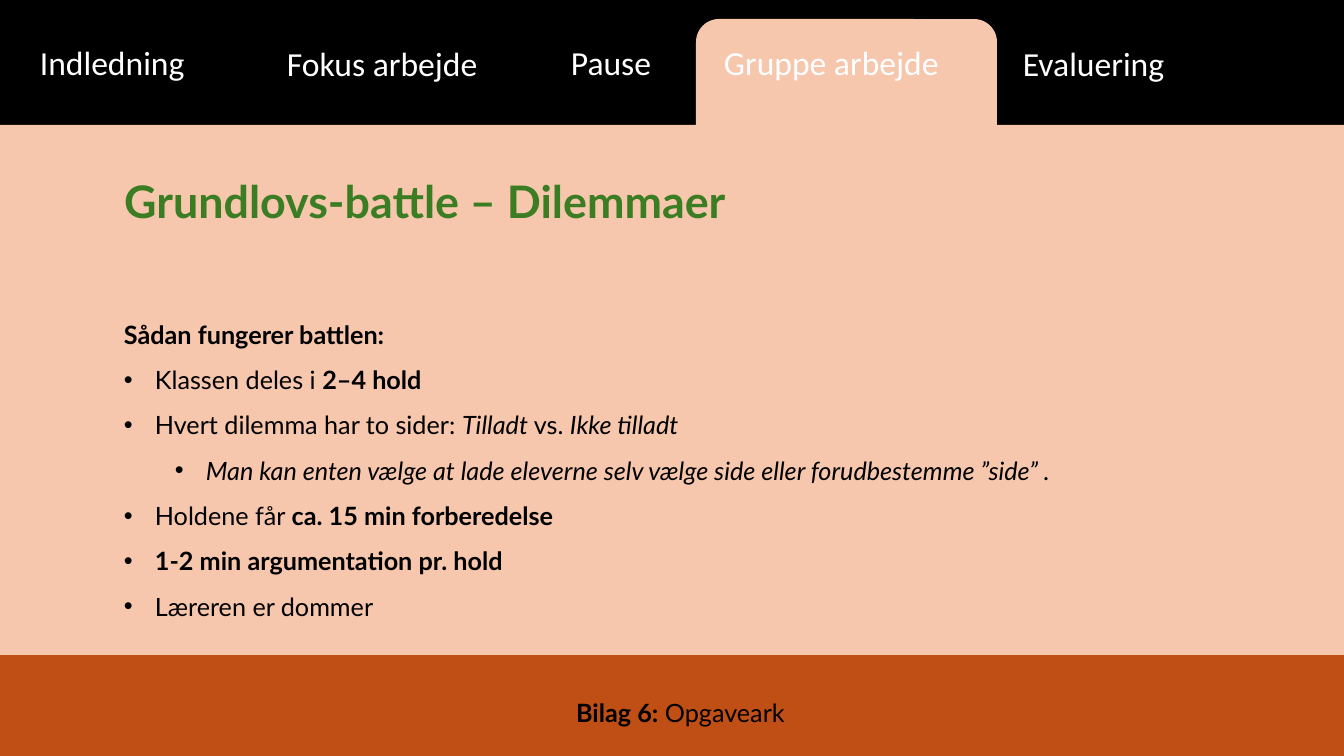
"""Build the group-work slide with its tab row, battle rules and footer."""
from lxml.etree import SubElement
from pptx import Presentation
from pptx.dml.color import RGBColor
from pptx.enum.shapes import MSO_SHAPE as SHAPE
from pptx.enum.text import MSO_ANCHOR as ANCHOR, MSO_AUTO_SIZE as AUTO, PP_ALIGN as ALIGN
from pptx.oxml.ns import qn
from pptx.util import Emu, Pt

COLORS = {"black": "000000", "white": "FFFFFF", "peach": "F6C6AD",
          "rust": "C04F15", "green": "3B7D23"}
TABS = [("Indledning", 30, 37, 217), ("Fokus arbejde", 277, 38, 254),
        ("Pause", 561, 37, 122), ("Gruppe arbejde", 714, 37, 269),
        ("Evaluering", 1013, 38, 217)]
TITLE = [("Grundlovs-battle – Dilemmaer", "b")]
HEADING = [("Sådan fungerer battlen:", "b")]
RULES = [
    (0, [("Klassen deles i ", ""), ("2–4 hold", "b")]),
    (0, [("Hvert dilemma har to sider: ", ""), ("Tilladt", "i"),
         (" vs. ", ""), ("Ikke tilladt", "i")]),
    (1, [("Man kan enten vælge at lade eleverne selv vælge side "
          "eller forudbestemme ”side” .", "i")]),
    (0, [("Holdene får ", ""), ("ca. 15 min forberedelse", "b")]),
    (0, [("1-2 min argumentation pr. hold", "b")]),
    (0, [("Læreren er dommer", "")]),
]
FOOTER = [("Bilag 6:", "b"), (" Opgaveark", "")]
HANG, STEP = 31, 51


def px(n):
    return Emu(round(n * 914400 / 100.8))


def box(*lengths):
    return [px(n) for n in lengths]


def rgb(name):
    return RGBColor.from_string(COLORS[name])


def add_block(shapes, kind, color, *place):
    sp = shapes.add_shape(kind, *box(*place))
    sp.shadow.inherit = False
    sp.fill.solid()
    sp.fill.fore_color.rgb = rgb(color)
    sp.line.fill.background()
    return sp


def add_runs(p, runs, size, color, font="Lato"):
    for text, style in runs:
        r = p.add_run()
        r.text = text
        r.font.name, r.font.size = font, Pt(size)
        r.font.bold, r.font.italic = "b" in style, "i" in style
        r.font.color.rgb = rgb(color)


def add_text(s, *place):
    tf = s.shapes.add_textbox(*box(*place)).text_frame
    tf.word_wrap = True
    return tf


def add_bullet(p, level):
    p.level = level
    p.line_spacing = 1.5
    pPr = p._p.get_or_add_pPr()
    pPr.set("marL", str(px(HANG + STEP * level)))
    pPr.set("indent", str(-px(HANG)))
    SubElement(pPr, qn("a:buFont")).set("typeface", "Arial")
    SubElement(pPr, qn("a:buChar")).set("char", "•")


def main():
    prs = Presentation()
    prs.slide_width, prs.slide_height = box(1344, 756)
    s = prs.slides.add_slide(prs.slide_layouts[5])
    s.background.fill.solid()
    s.background.fill.fore_color.rgb = rgb("black")

    panel = s.shapes.add_group_shape().shapes
    add_block(panel, SHAPE.ROUNDED_RECTANGLE, "peach", 696, 19, 301, 138)
    add_block(panel, SHAPE.RECTANGLE, "peach", -13, 125, 1387, 631)

    for label, left, top, width in TABS:
        tf = add_text(s, left, top, width, 50)
        add_runs(tf.paragraphs[0], [(label, "")], 24, "white", "Calibri")

    tf = add_block(s.shapes, SHAPE.RECTANGLE, "rust", -13, 655, 1387, 114).text_frame
    tf.vertical_anchor = ANCHOR.MIDDLE
    tf.paragraphs[0].alignment = ALIGN.CENTER
    add_runs(tf.paragraphs[0], FOOTER, 18, "black")

    title = s.shapes.title
    title.left, title.top, title.width, title.height = box(114, 169, 1157, 64)
    title.element.getparent().append(title.element)
    tf = title.text_frame
    tf.auto_size, tf.vertical_anchor = AUTO.NONE, ANCHOR.TOP
    tf.paragraphs[0].alignment = ALIGN.LEFT
    add_runs(tf.paragraphs[0], TITLE, 32, "green")

    tf = add_text(s, 114, 314, 1157, 312)
    add_runs(tf.paragraphs[0], HEADING, 18, "black")
    for level, runs in RULES:
        p = tf.add_paragraph()
        add_bullet(p, level)
        add_runs(p, runs, 18, "black")

    prs.save("out.pptx")


if __name__ == "__main__":
    main()
